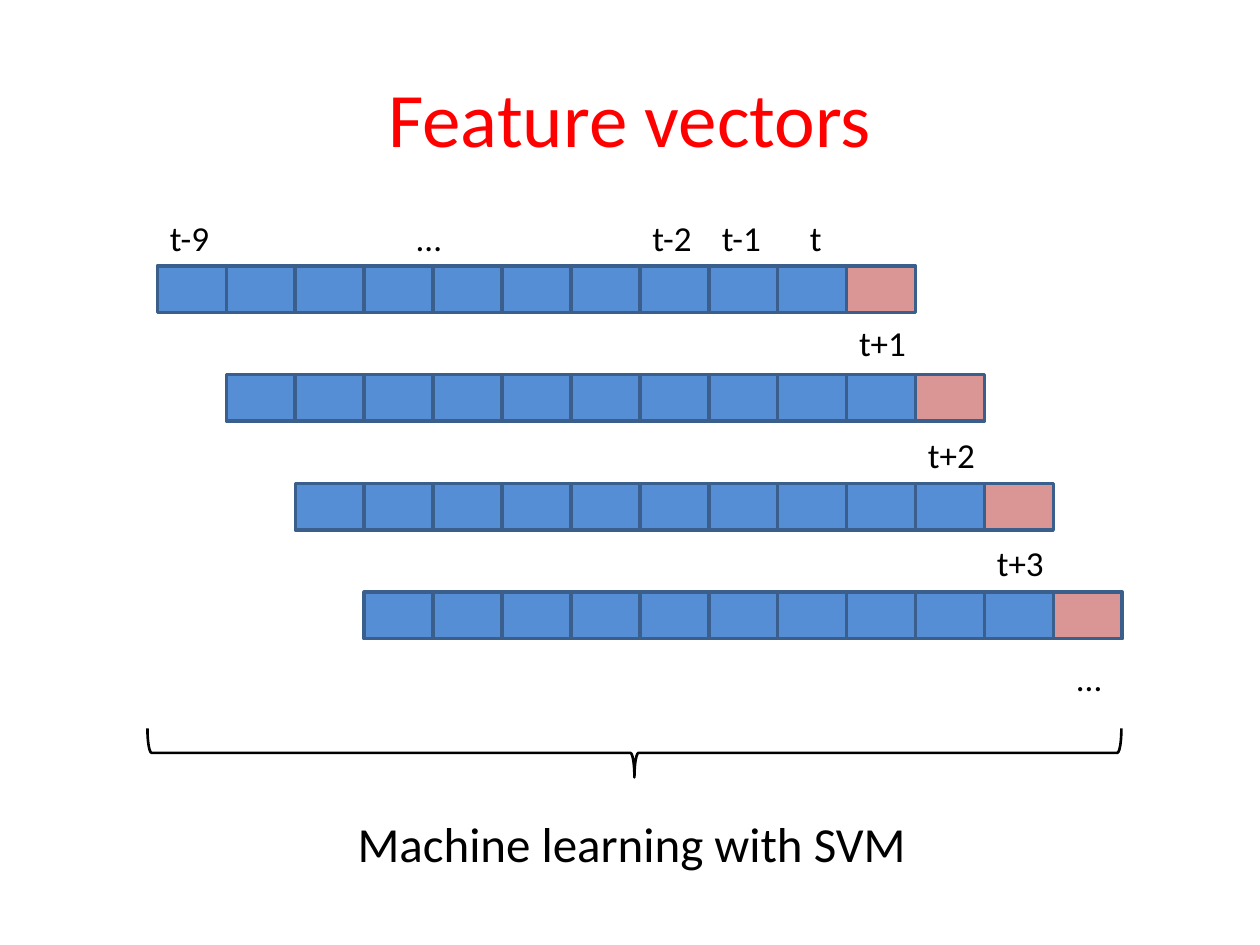
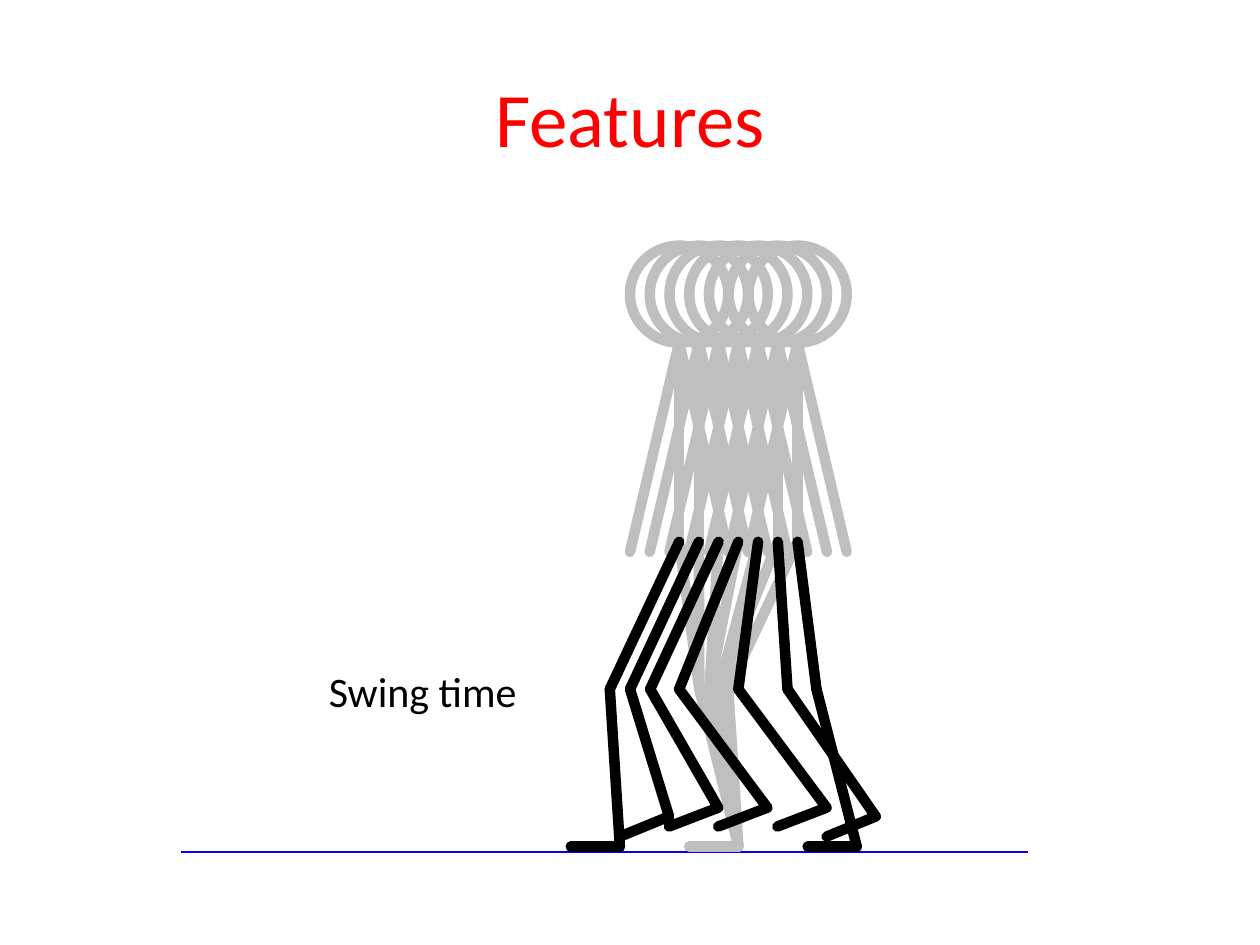
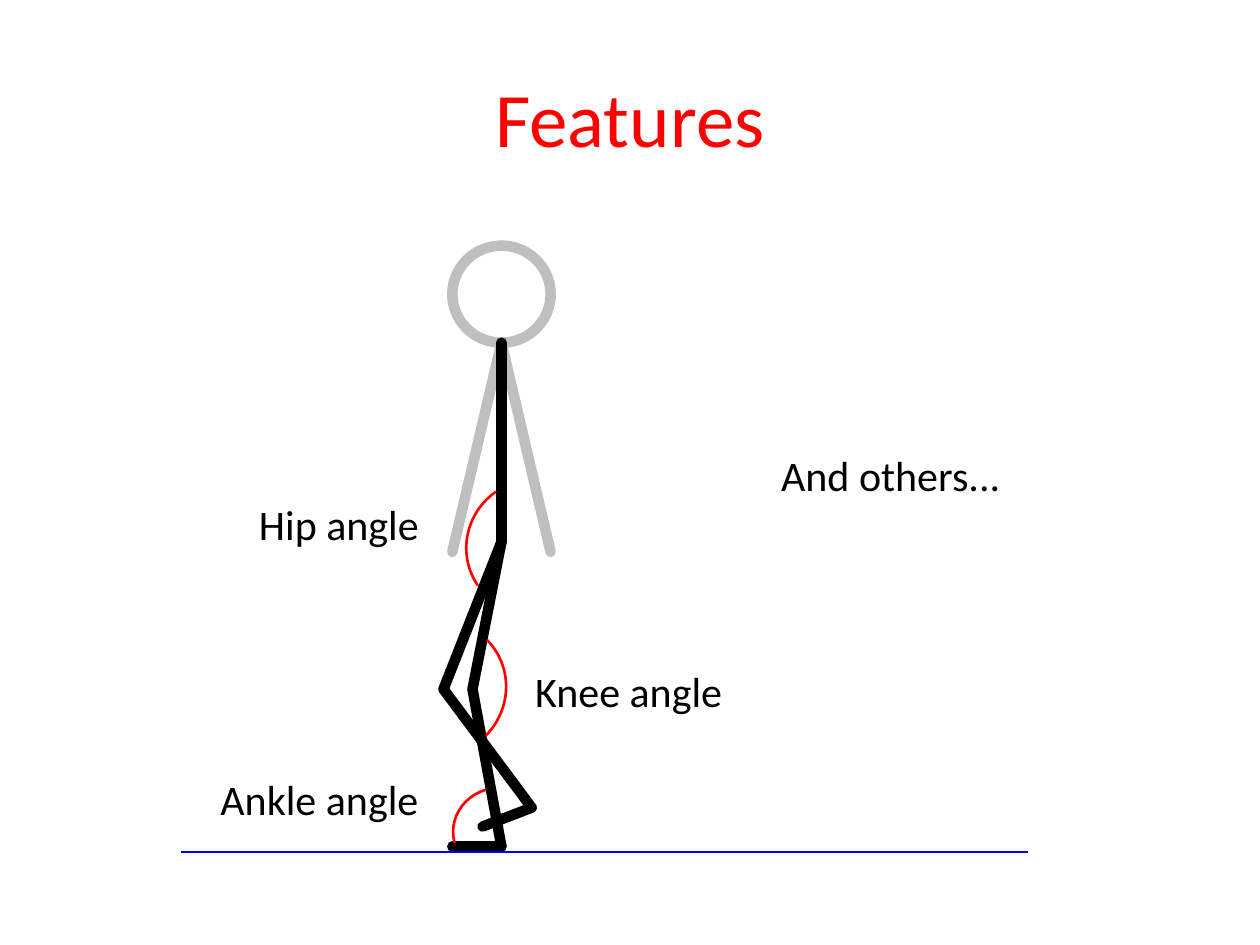
from dataclasses import dataclass
from itertools import pairwise

from lxml.etree import SubElement
from pptx import Presentation
from pptx.dml.color import RGBColor
from pptx.enum.shapes import MSO_CONNECTOR, MSO_SHAPE
from pptx.enum.text import MSO_ANCHOR, MSO_AUTO_SIZE, PP_ALIGN
from pptx.oxml.ns import qn
from pptx.util import Inches, Pt


@dataclass(frozen=True)
class Theme:
    font: str = "Calibri"
    title: str = "FF0000"
    ink: str = "000000"
    past: str = "558ED5"
    future: str = "D99694"
    cell_edge: str = "3A5F8C"
    ghost: str = "BFBFBF"
    ground: str = "0000FF"
    angle: str = "FF0000"
    title_size: int = 44
    summary_size: int = 28
    label_size: int = 24
    time_size: int = 20
    limb_width: float = 6
    cell_width: float = 2
    thin_width: float = 1.5
    ground_width: float = 1


THEME = Theme()
CELL_LEFT, CELL_STEP, CELL_HEIGHT = 1.25, 7.11 / 13, 0.37
ROW_TOP, ROW_STEP = 2.11, 2.59 / 3
PAST_CELLS = 10
NECK_Y, HIP_Y, HAND_Y, KNEE_Y, FOOT_Y = 2.72, 4.3, 4.38, 5.47, 6.72
HEAD_TOP, HEAD_HEIGHT, REACH = 1.95, 0.77, 0.39
FIRST_HIP, STRIDE = 5.39, 0.94 / 6
STANCE_ANKLE = (5.86, FOOT_Y)
STANCE_KNEES = [5.55, 5.55, 5.63, 5.63, 5.7, 5.7, 5.78]
SWING_LEGS = [
    (4.84, (4.92, 6.72), 6.72),
    (5, (5.31, 6.48), 6.64),
    (5.16, (5.7, 6.41), 6.56),
    (5.39, (6.09, 6.41), 6.56),
    (5.86, (6.56, 6.41), 6.56),
    (6.25, (6.95, 6.48), 6.64),
    (6.48, (6.8, 6.72), 6.72),
]


def add_text(slide, text, box, size, color=THEME.ink, align=PP_ALIGN.LEFT, **frame_format):
    frame = slide.shapes.add_textbox(*map(Inches, box)).text_frame
    defaults = {"word_wrap": False, "auto_size": MSO_AUTO_SIZE.SHAPE_TO_FIT_TEXT}
    for name, value in (defaults | frame_format).items():
        setattr(frame, name, value)
    paragraph = frame.paragraphs[0]
    paragraph.alignment = align
    run = paragraph.add_run()
    run.text = text
    for name, value in {"name": THEME.font, "size": Pt(size)}.items():
        setattr(run.font, name, value)
    run.font.color.rgb = RGBColor.from_string(color)


def add_title(slide, text):
    add_text(slide, text, (0.5, 0.3, 9, 1.25), THEME.title_size, THEME.title,
             PP_ALIGN.CENTER, word_wrap=True, auto_size=MSO_AUTO_SIZE.NONE,
             vertical_anchor=MSO_ANCHOR.MIDDLE)


def add_label(slide, text, left, top, width):
    add_text(slide, text, (left, top, width, 0.5), THEME.label_size, align=PP_ALIGN.CENTER)


def add_time(slide, text, left, top, width):
    add_text(slide, text, (left, top, width, 0.44), THEME.time_size)


def set_line(line, color, width):
    line.color.rgb = RGBColor.from_string(color)
    line.width = Pt(width)


def add_outline(slide, kind, box, color, width, fill=None, rotation=0):
    shape = slide.shapes.add_shape(kind, *map(Inches, box))
    shape.shadow.inherit = False
    shape.rotation = rotation
    set_line(shape.line, color, width)
    if fill:
        shape.fill.solid()
        shape.fill.fore_color.rgb = RGBColor.from_string(fill)
    else:
        shape.fill.background()


def add_line(slide, start, end, color, width, cap="flat"):
    line = slide.shapes.add_connector(MSO_CONNECTOR.STRAIGHT, *map(Inches, (*start, *end)))
    set_line(line.line, color, width)
    properties = line.element.spPr
    properties.find(qn("a:ln")).set("cap", cap)
    SubElement(properties, qn("a:effectLst"))


def add_limb(slide, joints, color):
    for start, end in pairwise(joints):
        add_line(slide, start, end, color, THEME.limb_width, "rnd")


def add_leg(slide, hip, knee, ankle, toe_y):
    toe = (ankle[0] - REACH, toe_y)
    add_limb(slide, [(hip, HIP_Y), (knee, KNEE_Y), ankle, toe], THEME.ink)


def add_stance_legs(slide, hips):
    for hip, knee in zip(hips, STANCE_KNEES):
        add_limb(slide, [(hip, HIP_Y), (knee, KNEE_Y)], THEME.ghost)
    for knee in sorted(set(STANCE_KNEES)):
        add_limb(slide, [(knee, KNEE_Y), STANCE_ANKLE], THEME.ghost)
    add_limb(slide, [STANCE_ANKLE, (STANCE_ANKLE[0] - REACH, FOOT_Y)], THEME.ghost)


def add_upper_body(slide, x, spine_color):
    add_outline(slide, MSO_SHAPE.OVAL, (x - REACH, HEAD_TOP, 2 * REACH, HEAD_HEIGHT),
                THEME.ghost, THEME.limb_width)
    for hand in (x + REACH, x - REACH):
        add_limb(slide, [(x, NECK_Y), (hand, HAND_Y)], THEME.ghost)
    add_limb(slide, [(x, NECK_Y), (x, HIP_Y)], spine_color)


def add_ground(slide):
    add_line(slide, (8.16, 6.76), (1.44, 6.76), THEME.ground, THEME.ground_width)


def add_vector(slide, row):
    for column in range(PAST_CELLS + 1):
        left = CELL_LEFT + (row + column) * CELL_STEP
        fill = THEME.past if column < PAST_CELLS else THEME.future
        add_outline(slide, MSO_SHAPE.RECTANGLE,
                    (left, ROW_TOP + row * ROW_STEP, CELL_STEP, CELL_HEIGHT),
                    THEME.cell_edge, THEME.cell_width, fill)


def build_vectors(slide):
    add_title(slide, "Feature vectors")
    for row in range(4):
        add_vector(slide, row)
    for text, left, width in [("t-9", 1.25, 0.52), ("...", 3.2, 0.41), ("t-2", 5.08, 0.52),
                              ("t-1", 5.63, 0.52), ("t", 6.33, 0.3)]:
        add_time(slide, text, left, 1.67, width)
    for step, top in enumerate((2.5, 3.39, 4.25), 1):
        add_time(slide, f"t+{step}", CELL_LEFT + (PAST_CELLS + step - 1) * CELL_STEP, top, 0.58)
    add_time(slide, "...", 8.44, 5.16, 0.41)
    add_outline(slide, MSO_SHAPE.RIGHT_BRACE, (4.84, 2.11, 0.39, 7.73),
                THEME.ink, THEME.thin_width, rotation=90)
    add_text(slide, "Machine learning with SVM", (2.74, 6.41, 4.6, 0.57), THEME.summary_size)


def build_swing(slide):
    add_title(slide, "Features")
    add_ground(slide)
    hips = [FIRST_HIP + phase * STRIDE for phase in range(len(SWING_LEGS))]
    for hip in reversed(hips):
        add_upper_body(slide, hip, THEME.ghost)
    add_stance_legs(slide, hips)
    for hip, (knee, ankle, toe_y) in zip(hips, SWING_LEGS):
        add_leg(slide, hip, knee, ankle, toe_y)
    add_label(slide, "Swing time", 2.5, 5.23, 1.71)


def build_angles(slide):
    add_title(slide, "Features")
    hip = 3.98
    add_upper_body(slide, hip, THEME.ink)
    add_leg(slide, hip, 3.75, (hip, FOOT_Y), FOOT_Y)
    add_leg(slide, hip, 3.52, (4.22, 6.41), 6.56)
    add_ground(slide)
    for box, rotation in [((2.95, 4.92, 1.06, 1.09), 44.9),
                          ((3.61, 6.24, 0.68, 0.71), 254.5),
                          ((3.71, 3.79, 1.06, 1.09), 235)]:
        add_outline(slide, MSO_SHAPE.ARC, box, THEME.angle, THEME.thin_width, rotation=rotation)
    for label in [("Ankle angle", 1.64, 6.09, 1.79), ("Knee angle", 4.14, 5.23, 1.7),
                  ("Hip angle", 1.95, 3.91, 1.48), ("And others...", 6.09, 3.52, 1.96)]:
        add_label(slide, *label)


def main():
    deck = Presentation()
    deck.slide_width, deck.slide_height = Inches(10), Inches(7.5)
    for build in (build_vectors, build_swing, build_angles):
        build(deck.slides.add_slide(deck.slide_layouts[6]))
    deck.save("out.pptx")


if __name__ == "__main__":
    main()
